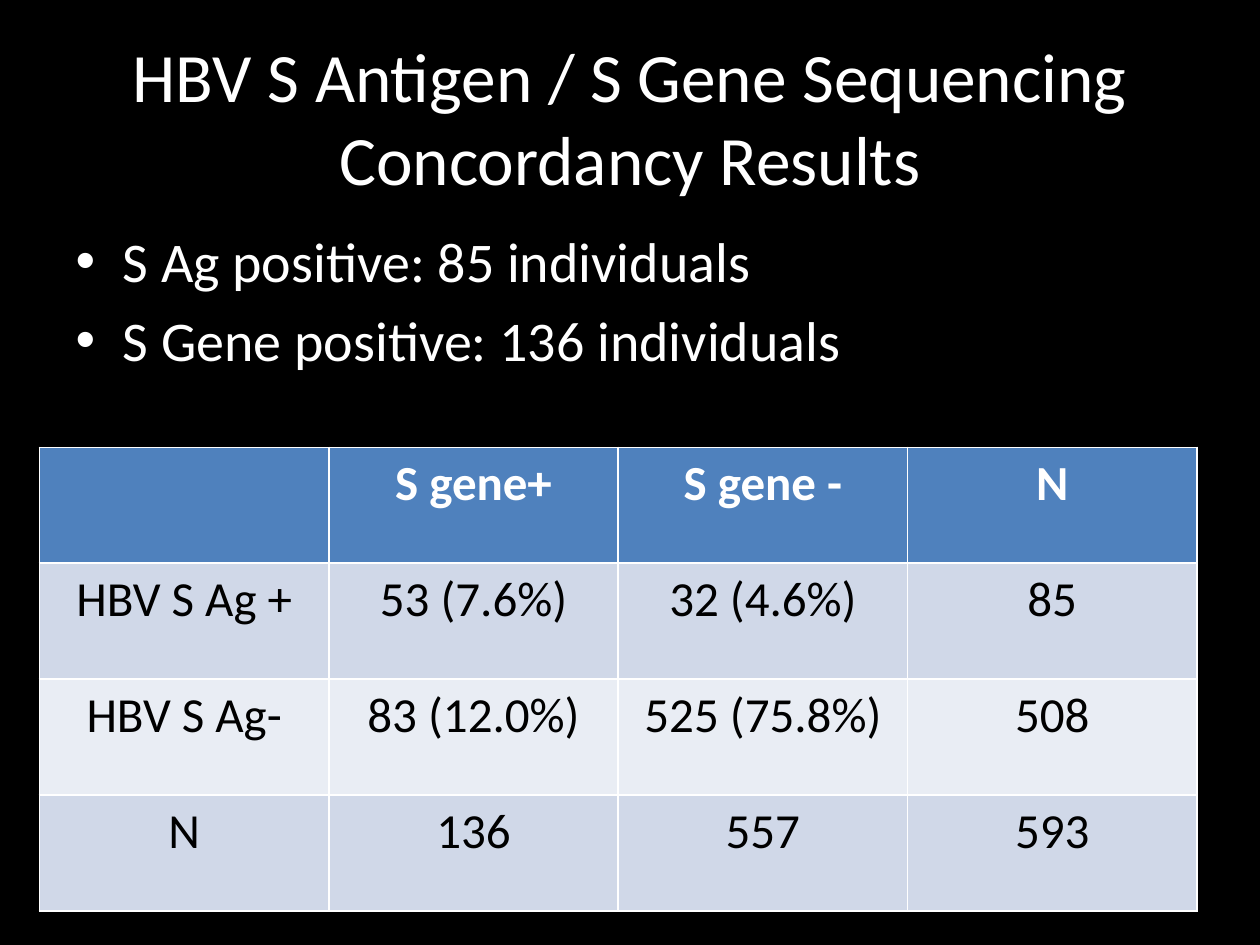
from pptx import Presentation
from pptx.dml.color import RGBColor
from pptx.enum.text import MSO_ANCHOR, MSO_AUTO_SIZE, PP_ALIGN
from pptx.util import Pt

CENTER, LEFT = PP_ALIGN.CENTER, PP_ALIGN.LEFT
MIDDLE, TOP = MSO_ANCHOR.MIDDLE, MSO_ANCHOR.TOP
NO_FIT = MSO_AUTO_SIZE.NONE
FONT = "Calibri"
COLORS = {
    "black": "000000",
    "white": "FFFFFF",
    "head": "4F81BD",
    "odd": "D0D8E8",
    "even": "E9EDF4",
}


def rgb(name):
    return RGBColor.from_string(COLORS[name])


def style(frame, size, color, align, bold=False):
    for para in frame.paragraphs:
        para.alignment = align
        for run in para.runs:
            run.font.name = FONT
            run.font.size = Pt(size)
            run.font.bold = bold
            run.font.color.rgb = rgb(color)


# Slide with a black background
deck = Presentation()
deck.slide_width, deck.slide_height = Pt(720), Pt(540)
slide = deck.slides.add_slide(deck.slide_layouts[1])
slide.background.fill.solid()
slide.background.fill.fore_color.rgb = rgb("black")

# Title and list
title, body = slide.shapes.title, slide.placeholders[1]
title.text_frame.text = "HBV S Antigen / S Gene Sequencing Concordancy Results"
body.text_frame.text = "S Ag positive: 85 individuals\nS Gene positive: 136 individuals"
for shape, top, height, size, align, anchor in [
    (title, 21.6, 90, 39.6, CENTER, MIDDLE),
    (body, 126, 356.4, 32, LEFT, TOP),
]:
    shape.left, shape.top = Pt(36), Pt(top)
    shape.width, shape.height = Pt(648), Pt(height)
    frame = shape.text_frame
    frame.auto_size = NO_FIT
    frame.word_wrap = True
    frame.vertical_anchor = anchor
    style(frame, size, "white", align)

# Concordance table: the default table style draws the white borders
ROWS = [
    ["", "S gene+", "S gene -", "N"],
    ["HBV S Ag +", "53 (7.6%)", "32 (4.6%)", "85"],
    ["HBV S Ag-", "83 (12.0%)", "525 (75.8%)", "508"],
    ["N", "136", "557", "593"],
]
FILLS = ["head", "odd", "even", "odd"]
table = slide.shapes.add_table(
    len(ROWS), len(ROWS[0]), Pt(22.5), Pt(255.6), Pt(661.6), Pt(265)
).table
for r, row in enumerate(ROWS):
    for c, text in enumerate(row):
        cell = table.cell(r, c)
        cell.fill.solid()
        cell.fill.fore_color.rgb = rgb(FILLS[r])
        cell.text_frame.text = text
        style(cell.text_frame, 28, "black" if r else "white", CENTER, r == 0)

deck.save("out.pptx")
